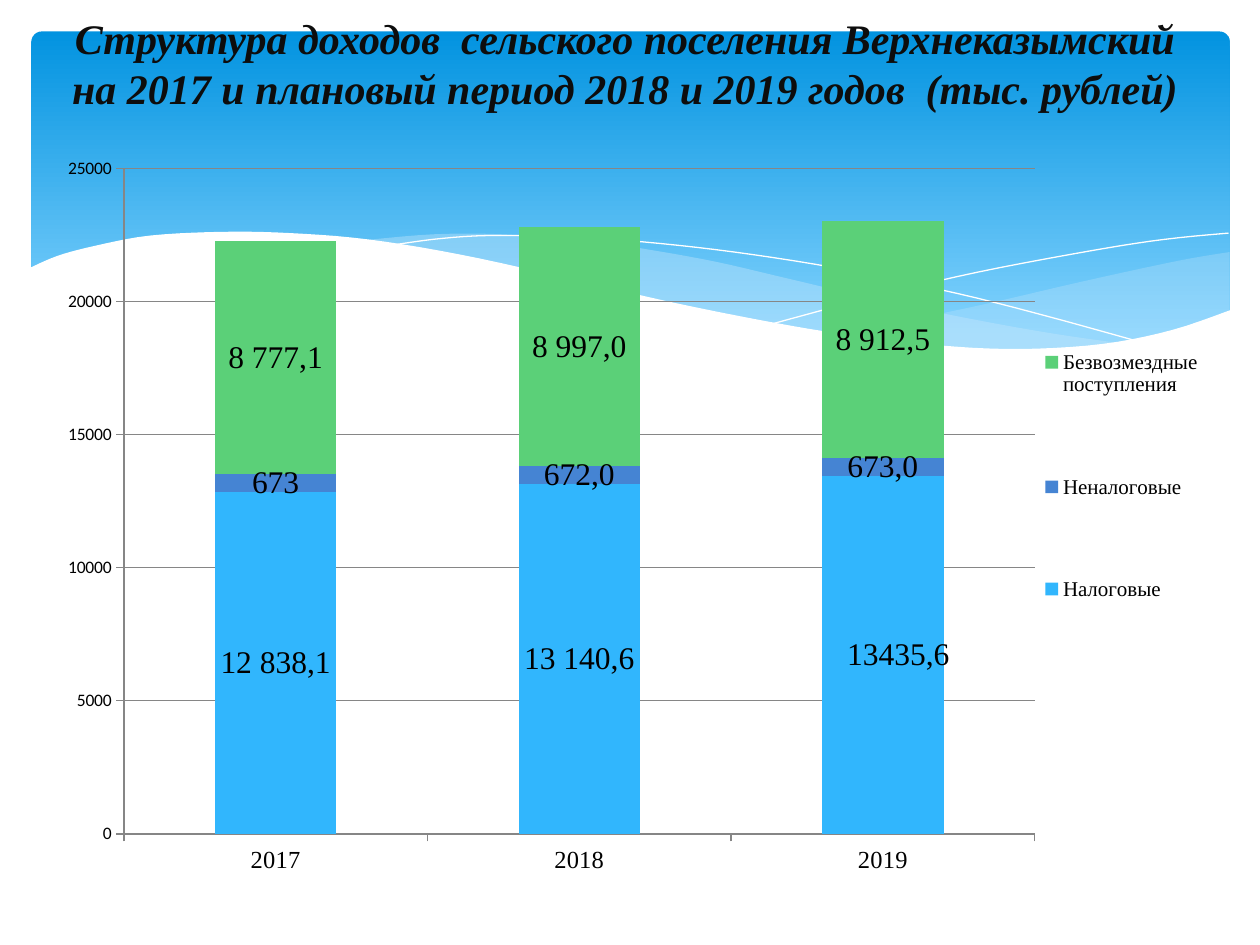
from dataclasses import dataclass
from lxml import etree
from pptx import Presentation
from pptx.chart.data import CategoryChartData
from pptx.dml.color import RGBColor
from pptx.enum import chart as ch, shapes, text
from pptx.oxml import ns
from pptx.util import Pt

PX = 9144  # EMU per px, 100 px to the inch


@dataclass(frozen=True)
class Theme:
    sky_top: str = "0293E0"
    sky_bottom: str = "83D3FE"
    mist: str = "C6E7FC"
    white: str = "FFFFFF"
    title: str = "0D0D0D"
    ink: str = "000000"
    rule: str = "868686"
    series: tuple = ("31B6FD", "4584D3", "5BD078")
    serif: str = "Times New Roman"
    sans: str = "Calibri"
    title_pt: int = 24
    label_pt: int = 18
    category_pt: int = 14
    legend_pt: int = 12
    value_pt: int = 10


T = Theme()

# Each wave is a list of curves, in px from the banner's corner
RIGHT_WAVE = [
    [(951, 175), (910, 182), (836, 198), (754, 217), (681, 232), (636, 240)],
    [(636, 240), (680, 246), (732, 251), (789, 253), (838, 250), (888, 242),
     (924, 232), (951, 222)]]
MIDDLE_WAVE = [
    [(868, 248), (812, 240), (750, 229), (681, 215), (604, 197), (544, 183),
     (489, 173), (440, 166), (374, 161), (319, 161), (261, 166)],
    [(261, 166), (317, 174), (379, 186), (424, 197), (505, 215), (593, 233),
     (670, 245), (748, 252), (813, 253), (868, 248)]]
FALLING_LINE = [
    [(284, 170), (319, 165), (362, 162), (425, 163), (485, 167), (557, 175),
     (640, 188), (735, 208), (806, 226), (882, 247)]]
RISING_LINE = [
    [(588, 232), (670, 210), (751, 191), (841, 174), (899, 165), (950, 160)]]
WHITE_WAVE = [
    [(952, 221), (905, 237), (850, 248), (784, 252), (719, 249), (643, 240),
     (578, 229), (504, 214), (422, 195), (340, 177), (267, 165), (205, 160),
     (152, 159), (94, 162), (51, 170), (21, 178), (-2, 188)],
    [(-2, 304), (952, 304)]]

YEARS = ("2017", "2018", "2019")
INCOME = (  # name, values, label texts (None shows the value)
    ("Налоговые", (12838.1, 13140.6, 13435.6), ("12 838,1", "13 140,6", "13435,6")),
    ("Неналоговые", (673, 672, 673), (None, "672,0", "673,0")),
    ("Безвозмездные поступления", (8777.1, 8996.9, 8912.5),
     ("8 777,1", "8 997,0", "8 912,5")),
)
LABEL_SHIFT = {(0, 2): 0.013}  # (series, point): part of the chart width


def rgb(value):
    return RGBColor.from_string(value)


def style(font, size, name, color=T.ink):
    font.size, font.name = Pt(size), name
    font.color.rgb = rgb(color)


def smooth(points, steps=5):
    """Catmull-Rom curve through the points."""
    padded = [points[0], *points, points[-1]]
    curve = [points[0]]
    for a, b, c, d in zip(padded, padded[1:], padded[2:], padded[3:]):
        for t in (i / steps for i in range(1, steps + 1)):
            curve.append(tuple(
                (2 * q + (r - p) * t + (2 * p - 5 * q + 4 * r - s) * t ** 2
                 + (3 * q - p - 3 * r + s) * t ** 3) / 2
                for p, q, r, s in zip(a, b, c, d)))
    return curve


def add_wave(slide, x, y, curves, fill=None, alpha=100):
    pts = [(round((x + px) * PX), round((y + py) * PX))
           for curve in curves for px, py in smooth(curve)]
    builder = slide.shapes.build_freeform(*pts[0])
    builder.add_line_segments(pts[1:], close=fill is not None)
    sp = builder.convert_to_shape()
    sp.shadow.inherit = False
    if fill is None:
        sp.fill.background()
        sp.line.color.rgb = rgb(T.white)
        sp.line.width = Pt(0)
        return
    sp.line.fill.background()
    sp.fill.solid()
    sp.fill.fore_color.rgb = rgb(fill)
    if alpha < 100:
        color = sp.fill._xPr.find(".//" + ns.qn("a:srgbClr"))
        etree.SubElement(color, ns.qn("a:alpha"), val=str(alpha * 1000))


def add_banner(slide, x, y, w, h):
    sp = slide.shapes.add_shape(shapes.MSO_SHAPE.ROUNDED_RECTANGLE,
                                x * PX, y * PX, w * PX, h * PX)
    sp.adjustments[0] = 0.03
    sp.shadow.inherit = False
    sp.line.fill.background()
    sp.fill.gradient()
    sp.fill.gradient_angle = 270
    for stop, pos, color in zip(sp.fill.gradient_stops, (0, 0.9),
                                (T.sky_top, T.sky_bottom)):
        stop.position = pos
        stop.color.rgb = rgb(color)
    # Waves along the lower edge
    add_wave(slide, x, y, RIGHT_WAVE, T.mist, 29)
    add_wave(slide, x, y, MIDDLE_WAVE, T.mist, 40)
    add_wave(slide, x, y, FALLING_LINE)
    add_wave(slide, x, y, RISING_LINE)
    add_wave(slide, x, y, WHITE_WAVE, T.white)


def add_title(slide, x, y, w, h):
    tf = slide.shapes.add_textbox(x * PX, y * PX, w * PX, h * PX).text_frame
    tf.word_wrap = True
    tf.vertical_anchor = text.MSO_ANCHOR.MIDDLE
    p = tf.paragraphs[0]
    p.text = ("Структура доходов  сельского поселения Верхнеказымский "
              "на 2017 и плановый период 2018 и 2019 годов  (тыс. рублей)")
    p.alignment = text.PP_ALIGN.CENTER
    font = p.runs[0].font
    style(font, T.title_pt, T.serif, T.title)
    font.bold = font.italic = True


def make_layout(**parts):
    layout = etree.Element(ns.qn("c:layout"))
    manual = etree.SubElement(layout, ns.qn("c:manualLayout"))
    for tag, val in parts.items():
        etree.SubElement(manual, ns.qn("c:" + tag), val=str(val))
    return layout


def place(element, after, **parts):
    """Fix a chart part by fractions of the chart's size."""
    for old in element.findall(ns.qn("c:layout")):
        element.remove(old)
    layout = make_layout(**parts)
    if after is None:
        element.insert(0, layout)
    else:
        element.find(ns.qn(after)).addnext(layout)


def label_series(index, ser, texts):
    labels = ser.data_labels
    labels.show_value = True
    style(labels.font, T.label_pt, T.serif)
    for i, txt in enumerate(texts):
        if txt is None:
            continue
        p = ser.points[i].data_label.text_frame.paragraphs[0]
        p.text = txt
        style(p.runs[0].font, T.label_pt, T.serif)
        if (index, i) in LABEL_SHIFT:
            dlbl = labels._element.findall(ns.qn("c:dLbl"))[-1]
            place(dlbl, "c:idx", x=LABEL_SHIFT[index, i], y=0)


def add_income_chart(slide, x, y, w, h):
    data = CategoryChartData()
    data.categories = YEARS
    for name, values, _ in INCOME:
        data.add_series(name, values)
    chart = slide.shapes.add_chart(ch.XL_CHART_TYPE.COLUMN_STACKED,
                                   x * PX, y * PX, w * PX, h * PX, data).chart
    chart.has_title = False
    style(chart.font, T.value_pt, T.sans)
    # Columns
    plot = chart.plots[0]
    plot.gap_width, plot.overlap, plot.vary_by_categories = 150, 100, False
    for i, (ser, color, row) in enumerate(zip(plot.series, T.series, INCOME)):
        ser.format.fill.solid()
        ser.format.fill.fore_color.rgb = rgb(color)
        label_series(i, ser, row[2])
    # Axes
    value, category = chart.value_axis, chart.category_axis
    value.minimum_scale, value.maximum_scale, value.major_unit = 0, 25000, 5000
    value.has_major_gridlines = True
    style(value.tick_labels.font, T.value_pt, T.sans)
    style(category.tick_labels.font, T.category_pt, T.serif)
    for axis in (value, category):
        axis.major_tick_mark = ch.XL_TICK_MARK.OUTSIDE
    for item in (value, category, value.major_gridlines):
        item.format.line.color.rgb = rgb(T.rule)
        item.format.line.width = Pt(0.75)
    # Legend
    chart.has_legend = True
    legend = chart.legend
    legend.position = ch.XL_LEGEND_POSITION.RIGHT
    legend.include_in_layout = False
    style(legend.font, T.legend_pt, T.serif)
    edge = dict(xMode="edge", yMode="edge")
    place(legend._element, "c:legendPos", **edge, x=0.82, y=0.17, w=0.17, h=0.55)
    place(chart._chartSpace.chart.plotArea, None, layoutTarget="inner", **edge,
          x=0.067, y=0.032, w=0.765, h=0.895)


def main():
    prs = Presentation()
    prs.slide_width, prs.slide_height = 1000 * PX, 750 * PX
    slide = prs.slides.add_slide(prs.slide_layouts[6])
    add_banner(slide, 25, 25, 951, 270)
    add_title(slide, 43, 3, 906, 94)
    add_income_chart(slide, 35, 115, 945, 590)
    prs.save("out.pptx")


if __name__ == "__main__":
    main()
